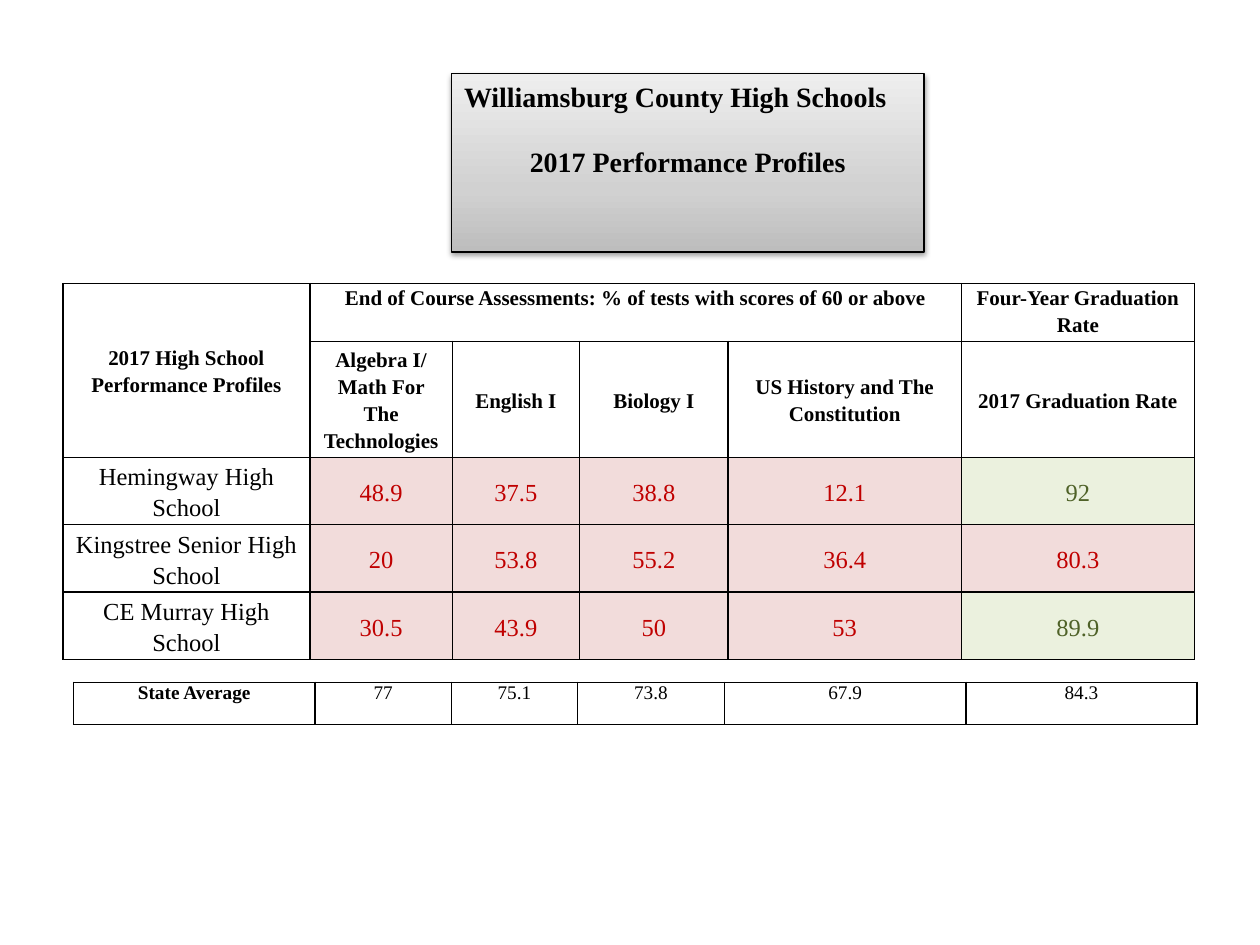
from lxml import etree
from pptx import Presentation
from pptx.dml.color import RGBColor
from pptx.enum.text import MSO_ANCHOR, MSO_AUTO_SIZE, PP_ALIGN
from pptx.oxml import parse_xml
from pptx.util import Inches, Pt

TOP, MIDDLE = MSO_ANCHOR.TOP, MSO_ANCHOR.MIDDLE
LEFT, CENTER = PP_ALIGN.LEFT, PP_ALIGN.CENTER
NO_FIT = MSO_AUTO_SIZE.NONE
NS = 'xmlns:a="http://schemas.openxmlformats.org/drawingml/2006/main"'

THEME = {
    "font": "Times New Roman",
    "ink": "000000", "low": "C00000", "high": "4F6228",
    "low fill": "F2DCDB", "high fill": "EBF1DE",
    "title": 16, "head": 12, "body": 14, "state": 11,
}

deck = Presentation()
deck.slide_width, deck.slide_height = Inches(10), Inches(7.5)
slide = deck.slides.add_slide(deck.slide_layouts[5])
UNIT = deck.slide_width / 120  # grid of 120 columns by 90 rows


def style(par, size, bold, color="ink", align=CENTER):
    par.alignment = align
    for run in par.runs:
        run.font.name = THEME["font"]
        run.font.size = Pt(THEME[size])
        run.font.bold = bold
        run.font.color.rgb = RGBColor.from_string(THEME[color])


def grid(left, top, cols, rows):
    """Add a plain table with thin black borders, measured in grid units."""
    frame = slide.shapes.add_table(
        len(rows), len(cols), round(left * UNIT), round(top * UNIT),
        round(sum(cols) * UNIT), round(sum(rows) * UNIT))
    table = frame.table
    table.first_row = table.horz_banding = False
    for col, width in zip(table.columns, cols):
        col.width = round(width * UNIT)
    for row, height in zip(table.rows, rows):
        row.height = round(height * UNIT)
    for cell in table.iter_cells():
        cell.margin_left = cell.margin_right = Inches(0.07)
        cell.margin_top = cell.margin_bottom = 0
        for side in ("lnL", "lnR", "lnT", "lnB"):
            cell._tc.get_or_add_tcPr().append(parse_xml(
                f'<a:{side} {NS} w="12700"><a:solidFill>'
                f'<a:srgbClr val="{THEME["ink"]}"/></a:solidFill></a:{side}>'))
        cell.fill.background()
    return table


# Title box with gradient and shadow
title = slide.shapes.title
title.left, title.top = round(43 * UNIT), round(7 * UNIT)
title.width, title.height = round(45 * UNIT), round(17 * UNIT)
stops = "".join(
    f'<a:gs pos="{share * 1000}"><a:srgbClr val="{color}"/></a:gs>'
    for share, color in ((0, "BDBDBD"), (35, "D1D1D1"), (100, "EEEEEE")))
props = title._element.spPr
props.append(etree.fromstring(
    f'<a:gradFill {NS} rotWithShape="1"><a:gsLst>{stops}</a:gsLst>'
    '<a:lin ang="16200000" scaled="0"/></a:gradFill>'))
title.line.color.rgb = RGBColor.from_string(THEME["ink"])
title.line.width = Pt(0.75)
props.append(etree.fromstring(
    f'<a:effectLst {NS}><a:outerShdw blurRad="40000" dist="20000" '
    'dir="5400000" rotWithShape="0"><a:srgbClr val="000000">'
    '<a:alpha val="38000"/></a:srgbClr></a:outerShdw></a:effectLst>'))
box = title.text_frame
box.text = "Williamsburg County High Schools\n2017 Performance Profiles"
box.auto_size, box.word_wrap, box.vertical_anchor = NO_FIT, True, TOP
for par, align in zip(box.paragraphs, (LEFT, CENTER)):
    style(par, "title", True, align=align)
box.paragraphs[0].space_after = Pt(18)

# School results: two header rows, then one row per school
results = [
    ["2017 High School Performance Profiles",
     "End of Course Assessments: % of tests with scores of 60 or above",
     "", "", "", "Four-Year Graduation Rate"],
    ["", "Algebra I/ Math For The Technologies", "English I", "Biology I",
     "US History and The Constitution", "2017 Graduation Rate"],
    ["Hemingway High School", "48.9", "37.5", "38.8", "12.1", "92"],
    ["Kingstree Senior High School", "20", "53.8", "55.2", "36.4", "80.3"],
    ["CE Murray High School", "30.5", "43.9", "50", "53", "89.9"],
]
state = ["State Average", "77", "75.1", "73.8", "67.9", "84.3"]
scores = grid(6, 27, [23.52, 13.56, 12.12, 14.16, 22.2, 22.2],
              [5.52, 11.04] + [6.42] * 3)
scores.cell(0, 0).merge(scores.cell(1, 0))
scores.cell(0, 1).merge(scores.cell(0, 4))
for r, row in enumerate(results):
    for c, text in enumerate(row):
        if not text:
            continue
        cell = scores.cell(r, c)
        cell.text = text
        cell.vertical_anchor = TOP if r == 0 and c else MIDDLE
        par = cell.text_frame.paragraphs[0]
        par.line_spacing = 1.15
        color = "ink"
        if r > 1 and c:  # green at or above the state average, else red
            color = "high" if float(text) >= float(state[c]) else "low"
            cell.fill.solid()
            cell.fill.fore_color.rgb = RGBColor.from_string(
                THEME[color + " fill"])
        style(par, "head" if r < 2 else "body", r < 2, color)

# State average strip
strip = grid(7, 65, [23, 13, 12, 14, 23, 22], [4])
for c, text in enumerate(state):
    cell = strip.cell(0, c)
    cell.text = text
    style(cell.text_frame.paragraphs[0], "state", c == 0)

deck.save("out.pptx")
